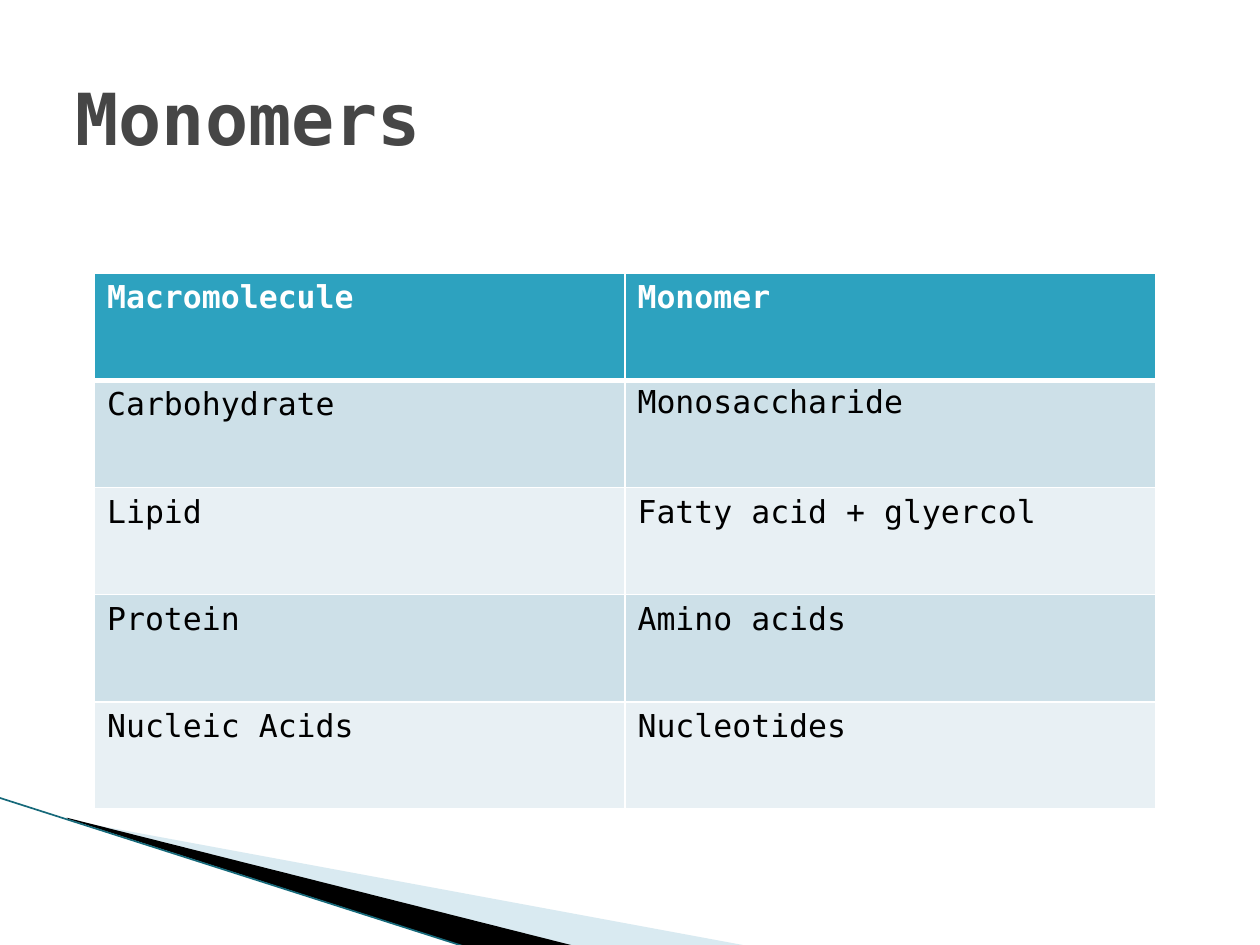
from lxml import etree
from pptx import Presentation
from pptx.dml.color import RGBColor
from pptx.enum.shapes import MSO_CONNECTOR
from pptx.enum.text import MSO_ANCHOR, PP_ALIGN
from pptx.oxml.ns import qn
from pptx.util import Inches, Pt

WHITE = RGBColor(0xFF, 0xFF, 0xFF)
BLACK = RGBColor(0, 0, 0)
GREY = RGBColor(0x46, 0x46, 0x46)
TEAL = RGBColor(0x2D, 0xA2, 0xBF)
DEEP = RGBColor(0x16, 0x69, 0x7A)
MIST = RGBColor(0xA0, 0xCB, 0xDC)
BANDS = (RGBColor(0xE8, 0xF0, 0xF4), RGBColor(0xCD, 0xE0, 0xE8))
STRAIGHT = MSO_CONNECTOR.STRAIGHT
LEFT = PP_ALIGN.LEFT
MIDDLE = MSO_ANCHOR.MIDDLE

ROWS = [
    ("Macromolecule", "Monomer"),
    ("Carbohydrate", "Monosaccharide"),
    ("Lipid", "Fatty acid + glyercol"),
    ("Protein", "Amino acids"),
    ("Nucleic Acids", "Nucleotides"),
]


class Page:
    font = "DejaVu Sans Mono"
    cols, rows = 10, 7.5

    def __init__(self, deck):
        deck.slide_width, deck.slide_height = Inches(10), Inches(7.5)
        self.wide = deck.slide_width / self.cols
        self.high = deck.slide_height / self.rows
        self.slide = deck.slides.add_slide(deck.slide_layouts[5])
        self.shapes = self.slide.shapes

    def spot(self, col, row):
        return round(col * self.wide), round(row * self.high)

    def style(self, frame, size, color, bold):
        for para in frame.paragraphs:
            para.alignment = LEFT
            for run in para.runs:
                font = run.font
                font.name, font.size, font.bold = self.font, Pt(size), bold
                font.color.rgb = color

    def title(self, text, at, size):
        box = self.shapes.title
        box.left, box.top = self.spot(*at)
        box.width, box.height = self.spot(*size)
        box.text_frame.text = text
        box.text_frame.vertical_anchor = MIDDLE
        self.style(box.text_frame, 41, GREY, True)

    def wedge(self, points, color, alpha=100):
        start, *rest = [self.spot(*point) for point in points]
        pen = self.shapes.build_freeform(*start)
        pen.add_line_segments(rest, close=True)
        shape = pen.convert_to_shape()
        shape.shadow.inherit = False
        shape.line.fill.background()
        shape.fill.solid()
        shape.fill.fore_color.rgb = color
        if alpha < 100:
            tint = shape.fill._xPr.find(".//" + qn("a:srgbClr"))
            etree.SubElement(tint, qn("a:alpha"), val=str(alpha * 1000))

    def line(self, start, end, color, width):
        line = self.shapes.add_connector(STRAIGHT, *self.spot(*start), *self.spot(*end))
        line.line.color.rgb = color
        line.line.width = Pt(width)
        etree.SubElement(line._element.spPr, qn("a:effectLst"))

    def border(self, cell, widths):
        props = cell._tc.get_or_add_tcPr()
        for place, (side, width) in enumerate(widths.items()):
            edge = etree.Element(qn("a:ln" + side), w=str(Pt(width)))
            fill = etree.SubElement(edge, qn("a:solidFill"))
            etree.SubElement(fill, qn("a:srgbClr"), val=str(WHITE))
            props.insert(place, edge)

    def table(self, data, at, size):
        grid = self.shapes.add_table(
            len(data), len(data[0]), *self.spot(*at), *self.spot(*size)).table
        for row, texts in enumerate(data):
            head = row == 0
            for col, text in enumerate(texts):
                cell = grid.cell(row, col)
                cell.text_frame.text = text
                self.style(cell.text_frame, 18, WHITE if head else BLACK, head)
                cell.fill.solid()
                cell.fill.fore_color.rgb = TEAL if head else BANDS[row % 2]
                top, base = (3 if row == 1 else 1), (3 if head else 1)
                self.border(cell, {"L": 1, "R": 1, "T": top, "B": base})
        return grid


def main():
    deck = Presentation()
    page = Page(deck)
    page.wedge([(0.55, 6.51), (5.95, 7.51), (4.56, 7.51), (0.55, 6.5)], MIST, 40)
    page.wedge([(0.53, 6.49), (4.57, 7.51), (3.72, 7.52), (0.54, 6.5)], BLACK)
    page.line((-0.01, 6.33), (3.71, 7.52), DEEP, 0.95)
    grid = page.table(ROWS, (0.75, 2.17), (8.42, 4.25))
    grid.cell(1, 1).text_frame.paragraphs[0].line_spacing = 0.9
    page.title("Monomers", (0.5, 0.3), (9, 1.25))
    deck.save("out.pptx")


if __name__ == "__main__":
    main()
